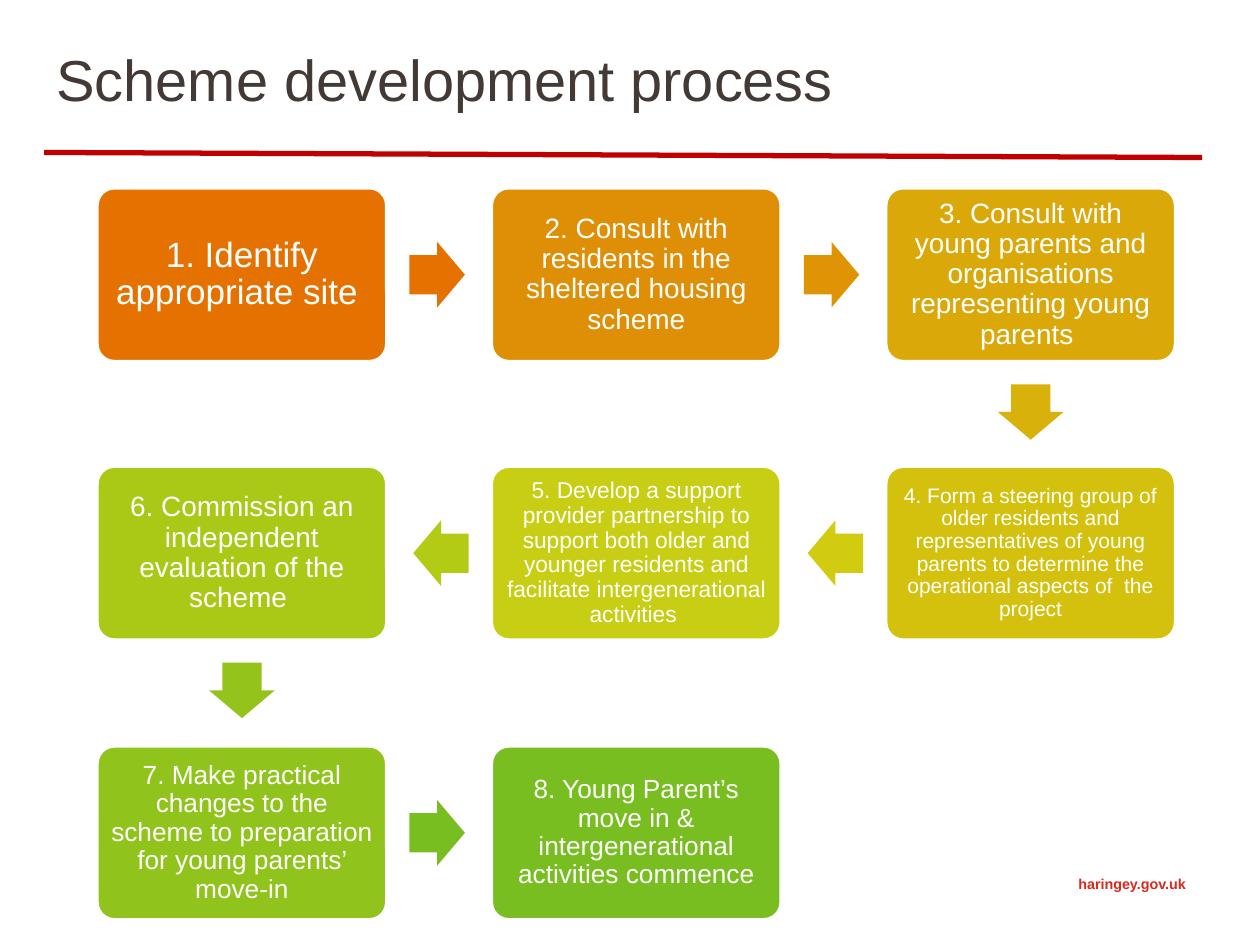
from dataclasses import dataclass

import pptx
import pptx.dml.color
import pptx.enum.shapes
import pptx.enum.text
import pptx.oxml
import pptx.oxml.ns
import pptx.util

RGB = pptx.dml.color.RGBColor
SHAPE = pptx.enum.shapes.MSO_SHAPE
ALIGN = pptx.enum.text.PP_ALIGN
ANCHOR = pptx.enum.text.MSO_ANCHOR

PX = 9144  # EMU per px, 100 px to the inch
FONT = "Arial"
WHITE = RGB(0xFF, 0xFF, 0xFF)
TITLE_BROWN = RGB(0x43, 0x39, 0x35)
RULE_RED = RGB(0xC0, 0x00, 0x00)
FOOTER_RED = RGB(0xDA, 0x29, 0x1C)

# Snake layout of the steps
COLS = (77, 390, 703)
ROWS = (149, 370, 592)
BOX_W, BOX_H = 230, 138
ARROW_W, ARROW_H = 44, 52
ARROW_OFFSET = 40  # from box edge to arrow centre


@dataclass
class Step:
    text: str
    size: int
    fill: RGB
    arrow: RGB | None = None  # arrow to the next step


STEPS = [
    Step("1. Identify appropriate site ", 20,
         RGB(0xE5, 0x72, 0x00), RGB(0xE5, 0x72, 0x00)),
    Step("2. Consult with residents in the sheltered housing scheme", 16,
         RGB(0xDF, 0x8F, 0x05), RGB(0xDE, 0x94, 0x05)),
    Step("3. Consult with young parents and organisations representing "
         "young parents ", 16,
         RGB(0xDA, 0xA9, 0x09), RGB(0xD8, 0xB1, 0x0B)),
    Step("4. Form a steering group of older residents and representatives of "
         "young parents to determine the operational aspects of  the project", 12,
         RGB(0xD4, 0xC1, 0x0E), RGB(0xD1, 0xCC, 0x10)),
    Step("5. Develop a support provider partnership to support both older and "
         "younger residents and facilitate intergenerational activities ", 13,
         RGB(0xC7, 0xCE, 0x13), RGB(0xB4, 0xCB, 0x16)),
    Step("6. Commission an independent evaluation of the scheme ", 16,
         RGB(0xAA, 0xC9, 0x17), RGB(0x94, 0xC4, 0x1B)),
    Step("7. Make practical changes to the scheme to preparation for young "
         "parents’ move-in", 15,
         RGB(0x90, 0xC3, 0x1C), RGB(0x78, 0xBE, 0x20)),
    Step("8. Young Parent’s move in & intergenerational activities commence", 15,
         RGB(0x78, 0xBE, 0x20)),
]


def px(*lengths: int) -> list[pptx.util.Emu]:
    return [pptx.util.Emu(int(n * PX)) for n in lengths]


def write(tf, text: str, size: float, color: RGB, align, anchor, bold=False):
    tf.word_wrap = True
    tf.vertical_anchor = anchor
    p = tf.paragraphs[0]
    p.text = text
    p.alignment = align
    p.font.name = FONT
    p.font.size = pptx.util.Pt(size)
    p.font.bold = bold
    p.font.color.rgb = color
    return p


def add_block(s, kind, left: int, top: int, width: int, height: int, fill: RGB):
    sp = s.shapes.add_shape(kind, *px(left, top, width, height))
    sp.shadow.inherit = False
    sp.fill.solid()
    sp.fill.fore_color.rgb = fill
    return sp


def add_box(s, step: Step, left: int, top: int) -> None:
    sp = add_block(s, SHAPE.ROUNDED_RECTANGLE, left, top, BOX_W, BOX_H, step.fill)
    sp.adjustments[0] = 0.1
    sp.line.color.rgb = WHITE
    sp.line.width = pptx.util.Pt(2)
    tf = sp.text_frame
    inset = pptx.util.Pt(0.3 * step.size)
    tf.margin_left = tf.margin_right = tf.margin_top = tf.margin_bottom = inset
    p = write(tf, step.text, step.size, WHITE, ALIGN.CENTER, ANCHOR.MIDDLE)
    p.line_spacing = 0.9


def add_arrow(s, color: RGB, cx: int, cy: int, rotation: int) -> None:
    sp = add_block(s, SHAPE.RIGHT_ARROW, cx - ARROW_W // 2, cy - ARROW_H // 2,
                   ARROW_W, ARROW_H, color)
    sp.adjustments[0] = 0.6
    sp.adjustments[1] = 0.5
    sp.line.fill.background()
    sp.rotation = rotation


def add_step(s, i: int, step: Step) -> None:
    row, col = divmod(i, len(COLS))
    last_in_row = col == len(COLS) - 1
    backwards = row % 2 == 1
    left = COLS[-1 - col] if backwards else COLS[col]
    top = ROWS[row]
    add_box(s, step, left, top)
    if step.arrow is None:
        return
    if last_in_row:
        dx, dy, rotation = 0, 1, 90
    elif backwards:
        dx, dy, rotation = -1, 0, 180
    else:
        dx, dy, rotation = 1, 0, 0
    cx = left + BOX_W // 2 + dx * (BOX_W // 2 + ARROW_OFFSET)
    cy = top + BOX_H // 2 + dy * (BOX_H // 2 + ARROW_OFFSET)
    add_arrow(s, step.arrow, cx, cy, rotation)


def main() -> None:
    prs = pptx.Presentation()
    prs.slide_width, prs.slide_height = px(1000, 750)
    s = prs.slides.add_slide(prs.slide_layouts[6])

    # Footer
    footer = s.shapes.add_textbox(*px(634, 690, 317, 40))
    write(footer.text_frame, "haringey.gov.uk", 8.2, FOOTER_RED,
          ALIGN.RIGHT, ANCHOR.TOP, bold=True)

    # Rule under the title
    rule = s.shapes.add_connector(pptx.enum.shapes.MSO_CONNECTOR.STRAIGHT,
                                  *px(35, 121, 954, 125))
    rule.line.color.rgb = RULE_RED
    rule.line.width = pptx.util.Pt(3)
    rule._element.spPr.append(pptx.oxml.parse_xml(
        f"<a:effectLst {pptx.oxml.ns.nsdecls('a')}/>"))

    # Title
    title = s.shapes.add_textbox(*px(35, 0, 900, 125))
    write(title.text_frame, "Scheme development process", 33, TITLE_BROWN,
          ALIGN.LEFT, ANCHOR.MIDDLE)

    # Process steps
    for i, step in enumerate(STEPS):
        add_step(s, i, step)

    prs.save("out.pptx")


if __name__ == "__main__":
    main()
